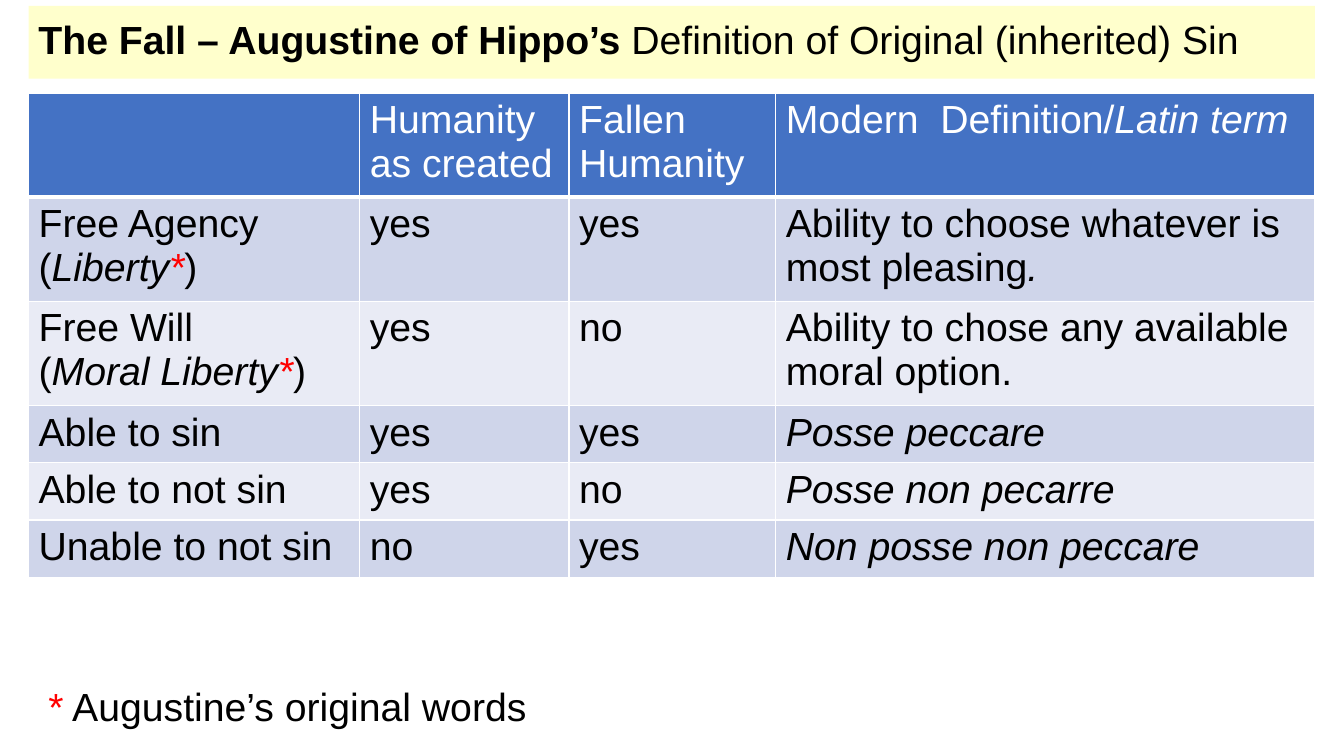
from lxml.etree import SubElement
from pptx import Presentation
from pptx.dml.color import RGBColor
from pptx.enum.text import MSO_ANCHOR
from pptx.oxml.ns import qn
from pptx.util import Pt

COLORS = {
    "black": "000000", "white": "FFFFFF", "red": "FF0000", "cream": "FFFFCC",
    "header": "4472C4", "odd": "CFD5EA", "even": "E9EBF5",
}
STYLES = {
    "plain": {"bold": False, "italic": False},
    "bold": {"bold": True, "italic": False},
    "italic": {"bold": False, "italic": True},
    "star": {"bold": False, "italic": True},
    "note star": {"bold": False, "italic": False},
}


def write_text(frame, paragraphs, color="black"):
    """Fill a text frame; each paragraph is a list of (text, style) spans."""
    for index, spans in enumerate(paragraphs):
        para = frame.add_paragraph() if index else frame.paragraphs[0]
        for text, style in spans:
            span = para.add_run()
            span.text = text
            for name, value in {"name": "Arial", "size": Pt(28), **STYLES[style]}.items():
                setattr(span.font, name, value)
            span_color = "red" if "star" in style else color
            span.font.color.rgb = RGBColor.from_string(COLORS[span_color])


def add_border(cell, side, width):
    line = SubElement(cell._tc.get_or_add_tcPr(), qn(f"a:ln{side}"), w=str(Pt(width)))
    fill = SubElement(line, qn("a:solidFill"))
    SubElement(fill, qn("a:srgbClr"), val=COLORS["white"])


deck = Presentation()
deck.slide_width, deck.slide_height = Pt(960), Pt(540)
page = deck.slides.add_slide(deck.slide_layouts[6])

# Title band
title = page.shapes.add_textbox(Pt(20.4), Pt(4.2), Pt(918.8), Pt(52))
title.fill.solid()
title.fill.fore_color.rgb = RGBColor.from_string(COLORS["cream"])
title.text_frame.word_wrap = True
title.text_frame.vertical_anchor = MSO_ANCHOR.MIDDLE
write_text(title.text_frame, [[
    ("The Fall – Augustine of Hippo’s ", "bold"),
    ("Definition of Original (inherited) Sin", "plain"),
]])
title.text_frame.paragraphs[0].line_spacing = 0.9

# Table content: a string is one plain span, a list holds paragraphs of spans
rows = [
    ["", "Humanity as created", "Fallen Humanity",
     [[("Modern  Definition/", "plain"), ("Latin term", "italic")]]],
    [[[("Free Agency", "plain")],
      [("(", "plain"), ("Liberty", "italic"), ("*", "star"), (")", "plain")]],
     "yes", "yes",
     [[("Ability to choose whatever is most pleasing", "plain"), (".", "italic")]]],
    [[[("Free Will", "plain")],
      [("(", "plain"), ("Moral Liberty", "italic"), ("*", "star"), (")", "plain")]],
     "yes", "no", "Ability to chose any available moral option."],
    ["Able to sin", "yes", "yes", [[("Posse peccare", "italic")]]],
    ["Able to not sin", "yes", "no", [[("Posse non pecarre", "italic")]]],
    ["Unable to not sin", "no", "yes", [[("Non posse non peccare", "italic")]]],
]
column_widths = [236.6, 149.5, 147.7, 385]
row_heights = [69.5] * 3 + [38.5] * 3

# Comparison table
table = page.shapes.add_table(
    len(rows), len(column_widths), Pt(20.4), Pt(66.4),
    Pt(sum(column_widths)), Pt(sum(row_heights))).table
for column, width in zip(table.columns, column_widths):
    column.width = Pt(width)
for row_index, (row, height) in enumerate(zip(rows, row_heights)):
    table.rows[row_index].height = Pt(height)
    is_header = row_index == 0
    band = "header" if is_header else "odd" if row_index % 2 else "even"
    for column_index, content in enumerate(row):
        cell = table.cell(row_index, column_index)
        for side in "LRTB":
            add_border(cell, side, 3 if is_header and side == "B" else 1)
        cell.fill.solid()
        cell.fill.fore_color.rgb = RGBColor.from_string(COLORS[band])
        paragraphs = [[(content, "plain")]] if isinstance(content, str) else content
        write_text(cell.text_frame, paragraphs, "white" if is_header else "black")

# Footnote
note = page.shapes.add_textbox(Pt(27.4), Pt(483.8), Pt(360.7), Pt(41))
note.text_frame.word_wrap = False
write_text(note.text_frame, [[
    ("*", "note star"), (" Augustine’s original words", "plain"),
]])

deck.save("out.pptx")
